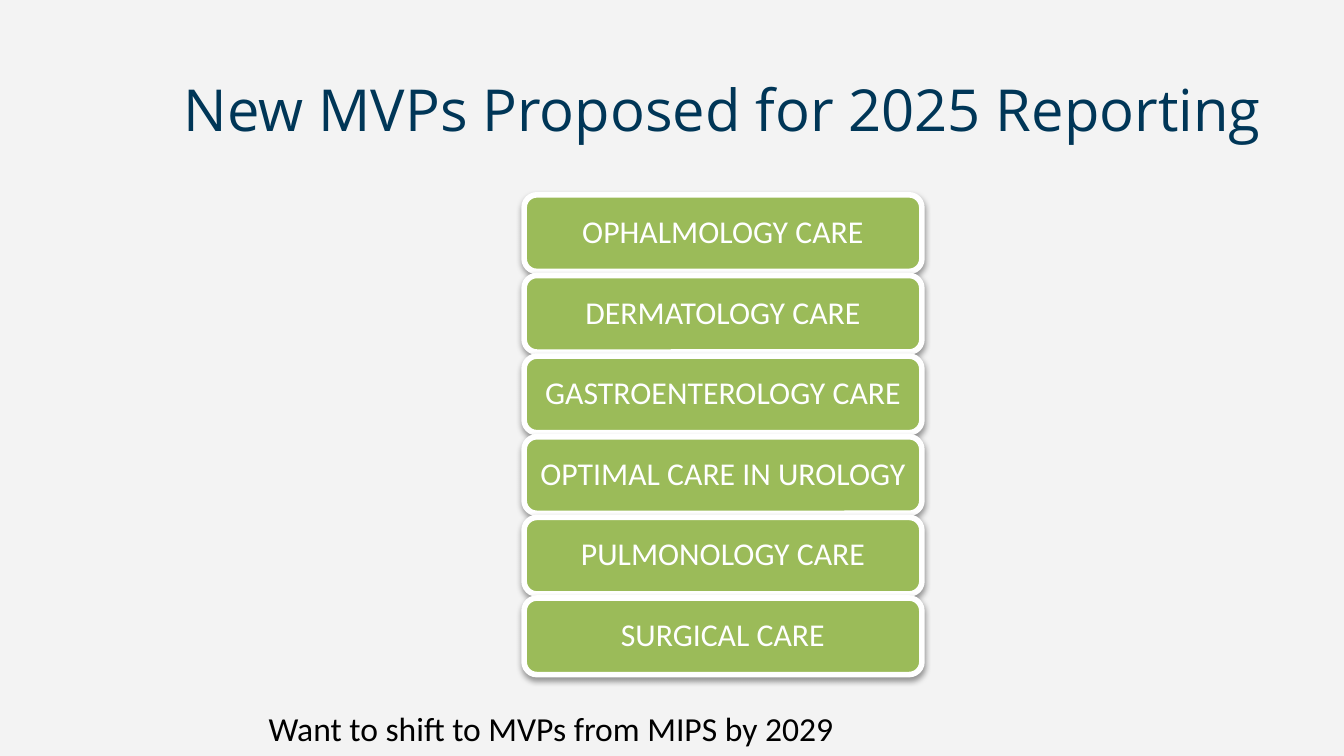
from lxml.etree import SubElement
from pptx import Presentation
from pptx.dml.color import RGBColor
from pptx.enum.shapes import MSO_SHAPE as Shape
from pptx.enum.text import MSO_ANCHOR as Anchor, PP_ALIGN as Align
from pptx.oxml.ns import qn
from pptx.util import Inches, Pt

COLORS = {
    "background": "F3F3F3",
    "title": "003657",
    "card": "9BBB59",
    "white": "FFFFFF",
    "black": "000000",
}
SPECIALTIES = [
    "OPHALMOLOGY CARE",
    "DERMATOLOGY CARE",
    "GASTROENTEROLOGY CARE",
    "OPTIMAL CARE IN UROLOGY",
    "PULMONOLOGY CARE",
    "SURGICAL CARE",
]
SLIDE_WIDTH = 10
FIRST_CARD_TOP = 1.45
CARD_PITCH = 0.6


def color(name):
    return RGBColor.from_string(COLORS[name])


def write(frame, text, font_name, size, color_name):
    frame.text = text
    frame.vertical_anchor = Anchor.MIDDLE
    font = frame.paragraphs[0].runs[0].font
    font.name = font_name
    font.size = Pt(size)
    font.color.rgb = color(color_name)


def add_label(slide, box, text, font_name, size, color_name, wrap):
    label = slide.shapes.add_textbox(*(Inches(length) for length in box))
    write(label.text_frame, text, font_name, size, color_name)
    label.text_frame.word_wrap = wrap


def add_soft_shadow(shape):
    """Give the shape a faint shadow falling straight down."""
    shape.shadow.inherit = False
    effects = shape._element.spPr.find(qn("a:effectLst"))
    shadow = SubElement(effects, qn("a:outerShdw"), blurRad=str(Pt(3.1)),
                        dist=str(Pt(1.6)), dir="5400000", rotWithShape="0")
    tint = SubElement(shadow, qn("a:srgbClr"), val=COLORS["black"])
    SubElement(tint, qn("a:alpha"), val="38000")


def add_card(slide, top, specialty):
    card = slide.shapes.add_shape(Shape.ROUNDED_RECTANGLE, Inches(3.9),
                                  Inches(top), Inches(2.96), Inches(0.57))
    card.fill.solid()
    card.fill.fore_color.rgb = color("card")
    card.line.color.rgb = color("white")
    card.line.width = Pt(3)
    add_soft_shadow(card)

    frame = card.text_frame
    write(frame, specialty, "Calibri", 17, "white")
    frame.word_wrap = True
    frame.margin_left = frame.margin_right = Inches(0.07)
    frame.margin_top = frame.margin_bottom = Inches(0.04)
    frame.paragraphs[0].alignment = Align.CENTER
    frame.paragraphs[0].line_spacing = 0.9


def main():
    deck = Presentation()
    deck.slide_width = Inches(SLIDE_WIDTH)
    deck.slide_height = Inches(SLIDE_WIDTH * 9 / 16)
    slide = deck.slides.add_slide(deck.slide_layouts[6])
    slide.background.fill.solid()
    slide.background.fill.fore_color.rgb = color("background")

    add_label(slide, (1.27, 0.46, 8.23, 0.7),
              "New MVPs Proposed for 2025 Reporting",
              "Open Sans", 31, "title", wrap=True)
    for index, specialty in enumerate(SPECIALTIES):
        add_card(slide, FIRST_CARD_TOP + index * CARD_PITCH, specialty)
    add_label(slide, (1.9, 5.22, 4.46, 0.4),
              "Want to shift to MVPs from MIPS by 2029",
              "Calibri", 18, "black", wrap=False)

    deck.save("out.pptx")


if __name__ == "__main__":
    main()
